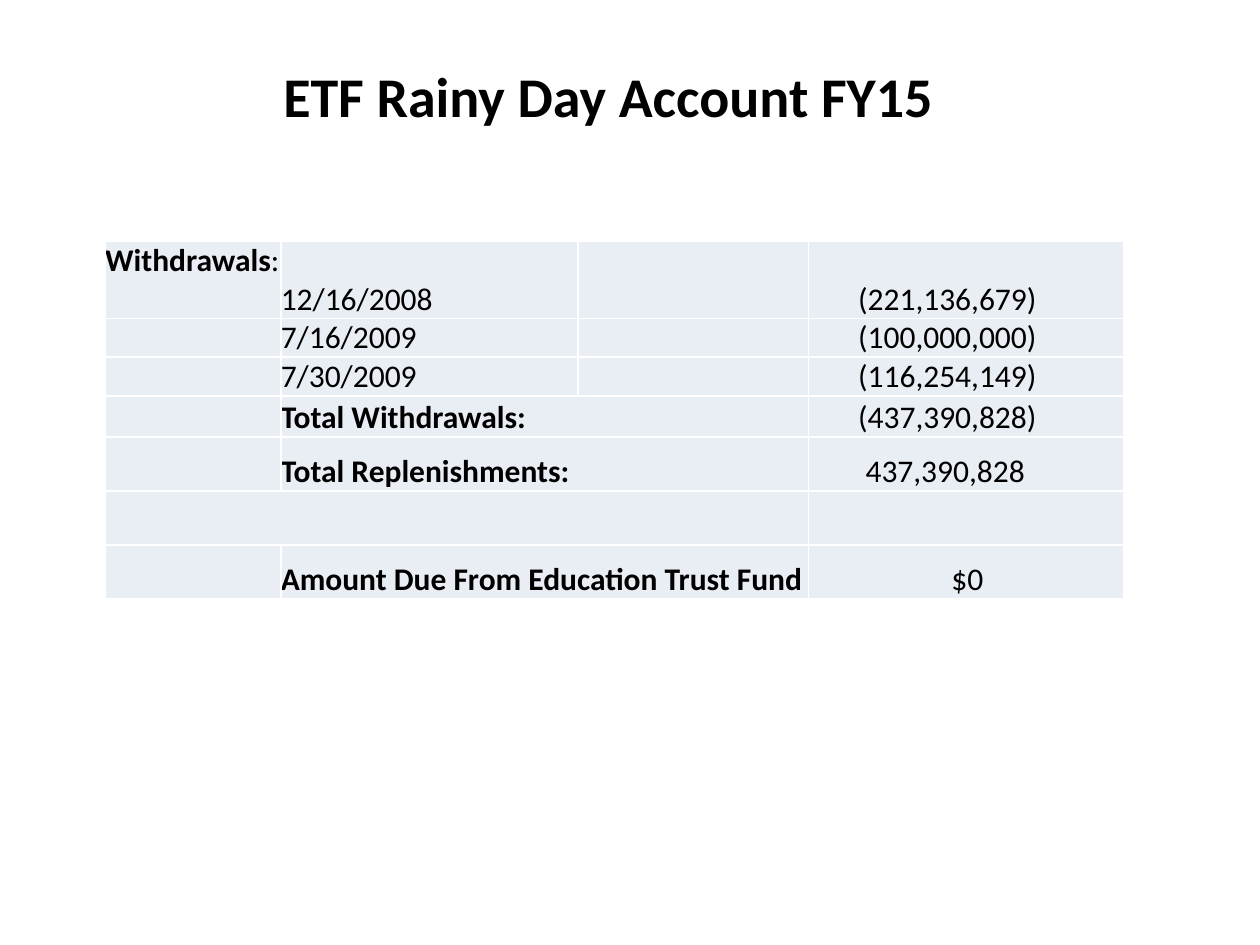
from lxml.etree import SubElement
from pptx import Presentation
from pptx.dml.color import RGBColor
from pptx.enum.text import MSO_ANCHOR as Anchor, PP_ALIGN as Align
from pptx.oxml.ns import qn
from pptx.util import Cm, Pt

FONT = "Calibri"
BLACK, WHITE, PALE = "000000", "FFFFFF", "E9EDF4"
COL_WIDTHS = [3.54, 5.99, 4.65, 6.35]
ROW_HEIGHTS = [1.55, 0.78, 0.78, 0.83, 1.09, 1.09, 1.09]
ROWS = [
    ("12/16/2008", "(221,136,679)", 1),
    ("7/16/2009", "(100,000,000)", 1),
    ("7/30/2009", "(116,254,149)", 1),
    ("Total Withdrawals:", "(437,390,828)", 1),
    ("Total Replenishments:", "437,390,828", 1.15),
    ("", "", 0),
    ("Amount Due From Education Trust Fund", "$0", 2.88),
]
FIRST_TOTAL, GAP_ROW = 3, 5


def color(value):
    """Turn a hex string into a colour."""
    return RGBColor.from_string(value)


def add_run(p, text, size, bold=False):
    """Add one formatted run to a paragraph."""
    r = p.add_run()
    r.text = text
    r.font.name, r.font.size, r.font.bold = FONT, Pt(size), bold
    r.font.color.rgb = color(BLACK)


def style_cell(cell):
    """Give a cell its fill, zero margins and thin white borders."""
    cell.margin_left = cell.margin_right = cell.margin_top = cell.margin_bottom = 0
    cell.vertical_anchor = Anchor.BOTTOM
    tc_pr = cell._tc.get_or_add_tcPr()
    for side in ("lnL", "lnR", "lnT", "lnB"):
        ln = SubElement(tc_pr, qn(f"a:{side}"), w=str(Pt(1)))
        fill = SubElement(ln, qn("a:solidFill"))
        SubElement(fill, qn("a:srgbClr"), val=WHITE)
    cell.fill.solid()
    cell.fill.fore_color.rgb = color(PALE)


def write_cell(cell, text, bold=False, indent=0):
    """Write text into a cell, indented from its left edge."""
    if text:
        cell.margin_left = Cm(indent)
        add_run(cell.text_frame.paragraphs[0], text, 18, bold)


def add_title(slide, left, top, width, height):
    """Place the slide title in the given box."""
    sp = slide.shapes.title
    sp.left, sp.top, sp.width, sp.height = Cm(left), Cm(top), Cm(width), Cm(height)
    tf = sp.text_frame
    tf.vertical_anchor = Anchor.MIDDLE
    p = tf.paragraphs[0]
    p.alignment = Align.CENTER
    add_run(p, "ETF Rainy Day Account FY15", 32, True)


def add_account_table(slide, left, top):
    """Place the withdrawals table with its corner at the given point."""
    frame = slide.shapes.add_table(len(ROWS), len(COL_WIDTHS), Cm(left), Cm(top),
                                   Cm(sum(COL_WIDTHS)), Cm(sum(ROW_HEIGHTS)))
    table = frame.table
    table.first_row = table.horz_banding = False
    for col, width in zip(table.columns, COL_WIDTHS):
        col.width = Cm(width)
    for row, height in zip(table.rows, ROW_HEIGHTS):
        row.height = Cm(height)
    for cell in table.iter_cells():
        style_cell(cell)
    for i, (label, amount, indent) in enumerate(ROWS):
        is_total = i >= FIRST_TOTAL
        if is_total:
            start = 0 if i == GAP_ROW else 1
            table.cell(i, start).merge(table.cell(i, 2))
        write_cell(table.cell(i, 1), label, is_total)
        write_cell(table.cell(i, 3), amount, indent=indent)
    heading = table.cell(0, 0)
    heading.vertical_anchor = Anchor.TOP
    write_cell(heading, "Withdrawals", True)
    add_run(heading.text_frame.paragraphs[0], ":", 18)


def main():
    """Build and save the slide."""
    prs = Presentation()
    prs.slide_width, prs.slide_height = Cm(25.4), Cm(19.05)
    s = prs.slides.add_slide(prs.slide_layouts[5])
    add_title(s, 5.28, 0.64, 13.97, 2.54)
    add_account_table(s, 2.12, 4.87)
    prs.save("out.pptx")


if __name__ == "__main__":
    main()
